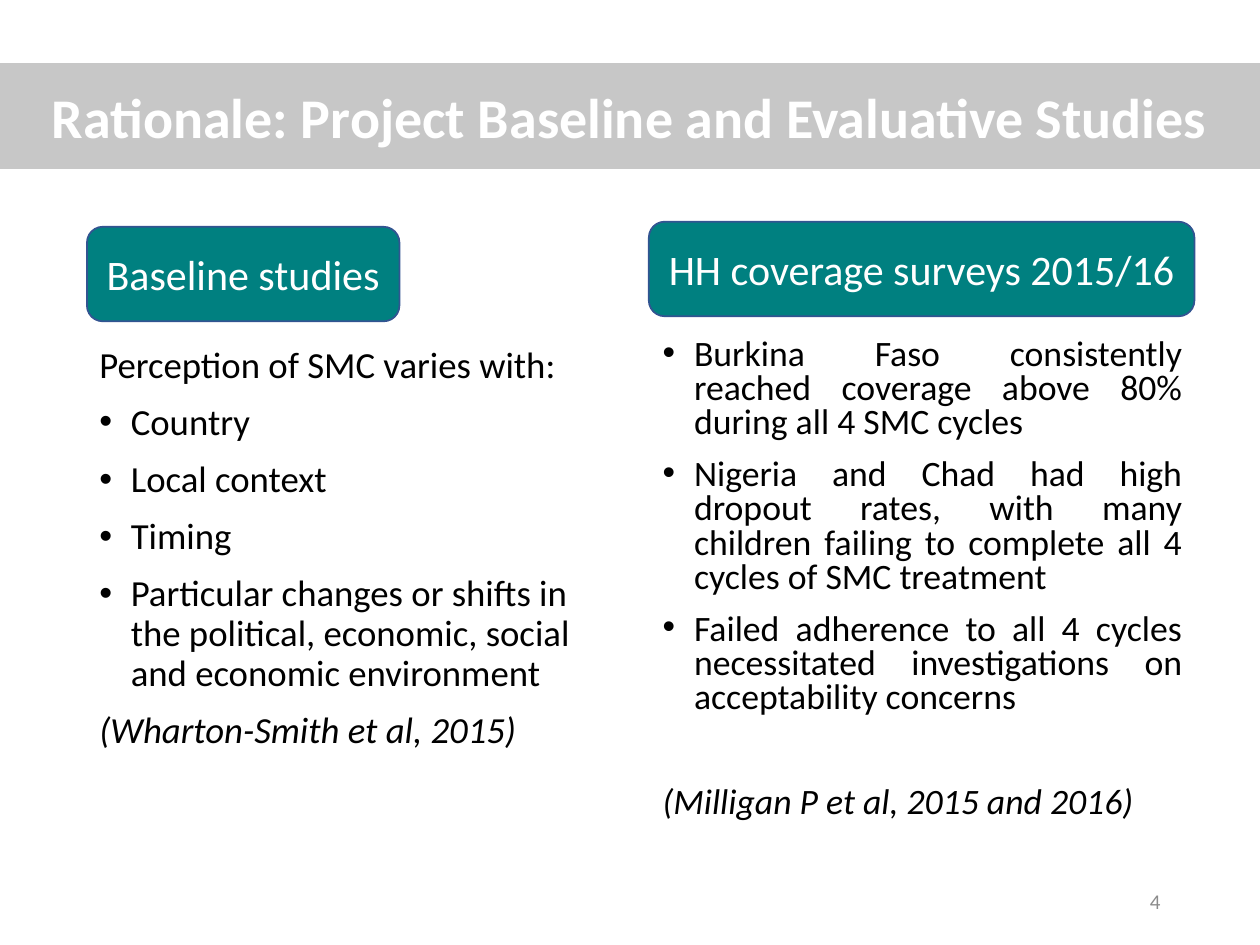
from lxml.etree import SubElement
from pptx import Presentation
from pptx.dml.color import RGBColor
from pptx.enum.shapes import MSO_SHAPE
from pptx.enum.text import MSO_ANCHOR, MSO_AUTO_SIZE, PP_ALIGN
from pptx.oxml.ns import qn
from pptx.util import Inches, Pt

WHITE = RGBColor(0xFF, 0xFF, 0xFF)
BLACK = RGBColor(0, 0, 0)
GREY = RGBColor(0x8C, 0x8C, 0x8C)
BAND_GREY = RGBColor(0xA6, 0xA6, 0xA6)
TEAL = RGBColor(0, 0x80, 0x80)
OUTLINE_BLUE = RGBColor(0x32, 0x54, 0x91)

# Content
TITLE = "Rationale: Project Baseline and Evaluative Studies"
PAGE_NUMBER = "4"
COLUMNS = [
    {
        "heading": "Baseline studies",
        "heading_at": (0.69, 1.8, 2.48, 0.75),
        "body_at": (0.69, 2.7, 4.23, 4.03),
        "intro": ["Perception of SMC varies with:"],
        "bullets": [
            "Country",
            "Local context",
            "Timing",
            "Particular changes or shifts in the political, economic, social and economic environment",
        ],
        "citation": "(Wharton-Smith et al, 2015)",
        "citation_gap": 10,
        "format": {"size": 21, "line_spacing": 0.9},
        "bullet_align": PP_ALIGN.LEFT,
    },
    {
        "heading": "HH coverage surveys 2015/16",
        "heading_at": (5.15, 1.76, 4.33, 0.75),
        "body_at": (5.16, 2.64, 4.32, 3.89),
        "intro": [],
        "bullets": [
            "Burkina Faso consistently reached coverage above 80% during all 4 SMC cycles",
            "Nigeria and Chad had high dropout rates, with many children failing to complete all 4 cycles of SMC treatment",
            "Failed adherence to all 4 cycles necessitated investigations on acceptability concerns",
        ],
        "citation": "(Milligan P et al, 2015 and 2016)",
        "citation_gap": 40,
        "format": {"size": 20.4, "line_spacing": 0.8},
        "bullet_align": PP_ALIGN.JUSTIFY,
    },
]


def add_text(frame, text, size, color=BLACK, bold=False, italic=False,
             align=PP_ALIGN.LEFT, line_spacing=1.0, gap=0, bullet=False):
    """Write one paragraph, using the empty first paragraph when there is one."""
    first = not frame.text
    para = frame.paragraphs[0] if first else frame.add_paragraph()
    if bullet:
        properties = para._p.get_or_add_pPr()
        properties.set("marL", str(Inches(0.25)))
        properties.set("indent", str(-Inches(0.25)))
        SubElement(properties, qn("a:buFont"), typeface="Arial")
        SubElement(properties, qn("a:buChar"), char="•")
    para.alignment = align
    para.line_spacing = line_spacing
    para.space_before = Pt(0 if first else gap)
    span = para.add_run()
    span.text = text
    span.font.name = "Calibri"
    span.font.size = Pt(size)
    span.font.bold = bold
    span.font.italic = italic
    span.font.color.rgb = color


def prepare_frame(shape, anchor=MSO_ANCHOR.MIDDLE):
    frame = shape.text_frame
    frame.word_wrap = True
    frame.auto_size = MSO_AUTO_SIZE.NONE
    frame.vertical_anchor = anchor
    return frame


deck = Presentation()
deck.slide_width, deck.slide_height = Inches(10), Inches(7.5)
page = deck.slides.add_slide(deck.slide_layouts[5])

# Title band
title = page.shapes.title
title.left, title.top = Inches(0), Inches(0.5)
title.width, title.height = Inches(10), Inches(0.84)
title.fill.solid()
title.fill.fore_color.rgb = BAND_GREY
band_color = title.fill._xPr.find(qn("a:solidFill")).find(qn("a:srgbClr"))
SubElement(band_color, qn("a:alpha"), val="62000")
add_text(prepare_frame(title), TITLE, 32, color=WHITE, bold=True, align=PP_ALIGN.CENTER)

# Two columns, each a heading plate above a text body
for column in COLUMNS:
    plate = page.shapes.add_shape(
        MSO_SHAPE.ROUNDED_RECTANGLE, *map(Inches, column["heading_at"]))
    plate.shadow.inherit = False
    plate.fill.solid()
    plate.fill.fore_color.rgb = TEAL
    plate.line.color.rgb = OUTLINE_BLUE
    plate.line.width = Pt(1)
    add_text(prepare_frame(plate), column["heading"], 24, color=WHITE, align=PP_ALIGN.CENTER)

    box = page.shapes.add_textbox(*map(Inches, column["body_at"]))
    body = prepare_frame(box, MSO_ANCHOR.TOP)
    for line in column["intro"]:
        add_text(body, line, **column["format"])
    for line in column["bullets"]:
        add_text(body, line, gap=10, bullet=True,
                 align=column["bullet_align"], **column["format"])
    add_text(body, column["citation"], italic=True,
             gap=column["citation_gap"], **column["format"])

# Page number
number_box = page.shapes.add_textbox(Inches(7.06), Inches(6.95), Inches(2.25), Inches(0.4))
add_text(prepare_frame(number_box), PAGE_NUMBER, 12, color=GREY, align=PP_ALIGN.RIGHT)

deck.save("out.pptx")
